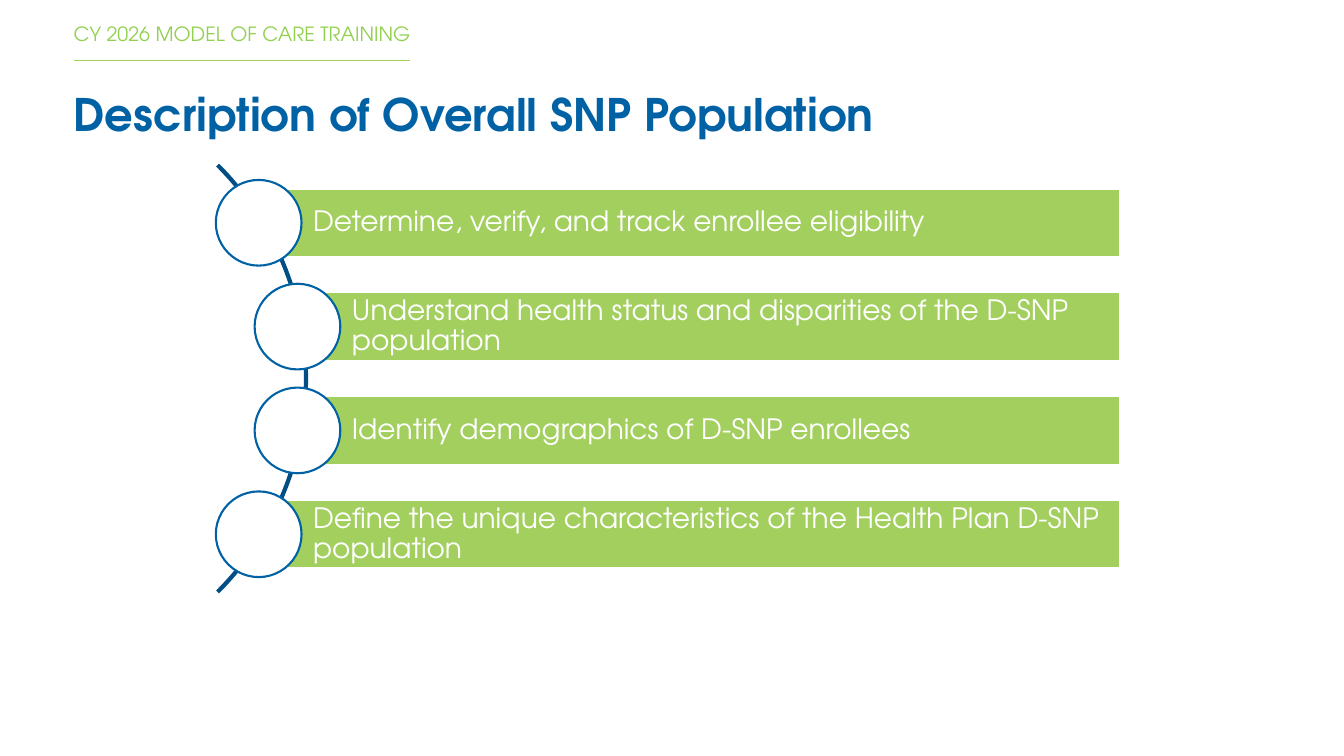
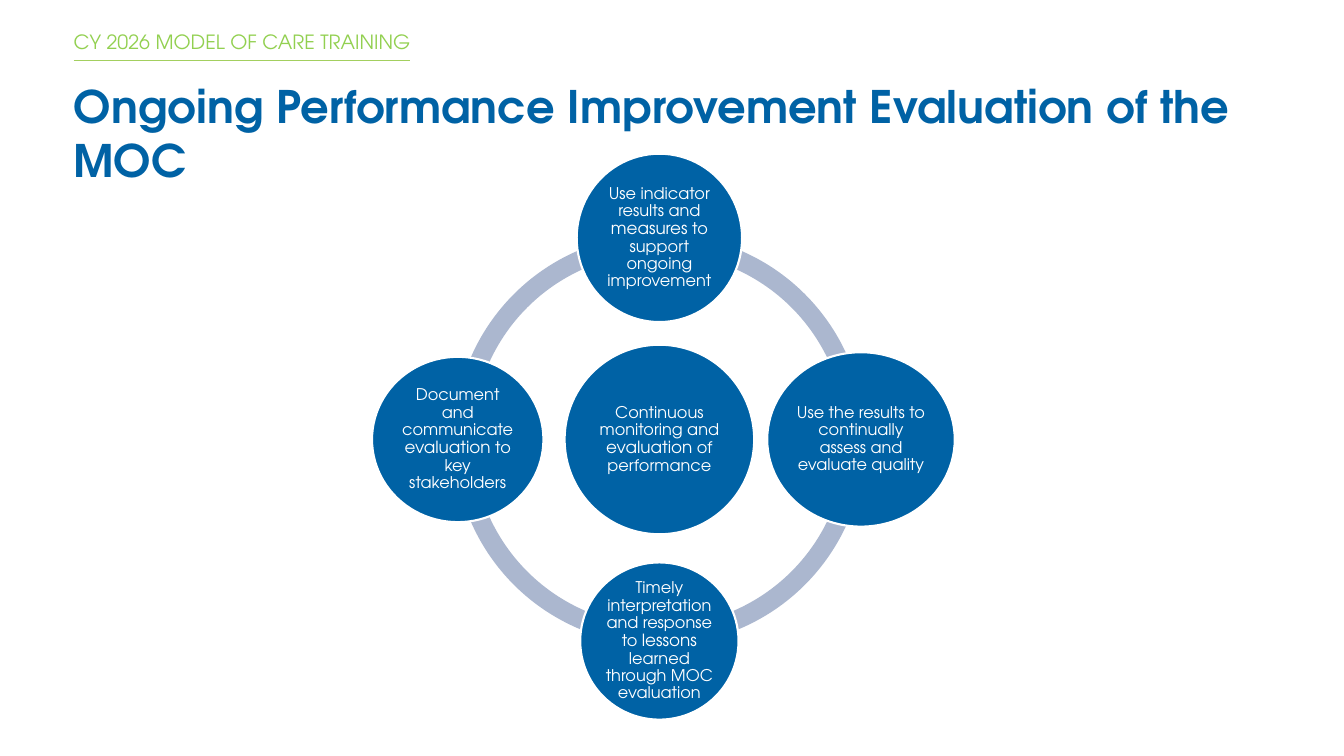
from math import sin, cos, radians, sqrt
from pptx import Presentation
from pptx.dml.color import RGBColor
from pptx.enum.shapes import MSO_CONNECTOR as Link, MSO_SHAPE as Kind
from pptx.enum.text import MSO_ANCHOR as Anchor, MSO_AUTO_SIZE as Fit, PP_ALIGN as Align
from pptx.oxml.ns import qn
from pptx.util import Pt
from lxml.etree import SubElement

PX = 9144  # 100 px to the inch
FACE = "TeX Gyre Adventor"
BLUE, NAVY, GREEN, LIME = "0062A5", "004E84", "A3CF5F", "92D050"
MIST, WHITE = "ABB7CF", "FFFFFF"
EDGES = ("margin_left", "margin_top", "margin_right", "margin_bottom")

# Shared formats
HEAD = dict(size=Pt(14), bold=False, color=LIME)
TITLE = dict(size=Pt(32), bold=True, color=BLUE)
ROW = dict(size=Pt(20), color=WHITE)
NODE = dict(size=Pt(11.5), color=WHITE)
TIGHT = dict(line_spacing=0.9, space_before=Pt(0), alignment=Align.LEFT)
ROOMY = dict(space_before=Pt(0), space_after=Pt(6), alignment=Align.LEFT)
MID = dict(line_spacing=0.9, alignment=Align.CENTER)


def px(*nums):
    return [round(n * PX) for n in nums]


def ink(code):
    return RGBColor.from_string(code)


def apply(item, vals):
    for key, val in vals.items():
        setattr(item, key, val)


def write(shape, runs, font, para, pad=(0, 0, 0, 0), anchor=Anchor.MIDDLE):
    """Fill a shape with one paragraph of (text, extra format) runs."""
    frame = shape.text_frame
    apply(frame, dict(word_wrap=True, auto_size=Fit.NONE, vertical_anchor=anchor))
    apply(frame, dict(zip(EDGES, px(*pad))))
    line = frame.paragraphs[0]
    if shape.is_placeholder:
        props = line._p.get_or_add_pPr()
        props.set("marL", "0")
        props.set("indent", "0")
        SubElement(props, qn("a:buNone"))
    apply(line, para)
    for text, extra in runs:
        run = line.add_run()
        run.text = text
        vals = {"name": FACE, **font, **extra}
        run.font.color.rgb = ink(vals.pop("color"))
        apply(run.font, vals)


def draw(slide, kind, box, fill=None, edge=None, width=1.5):
    shape = slide.shapes.add_shape(kind, *px(*box))
    shape.shadow.inherit = False
    if fill:
        shape.fill.solid()
        shape.fill.fore_color.rgb = ink(fill)
    else:
        shape.fill.background()
    if edge:
        shape.line.color.rgb = ink(edge)
        shape.line.width = Pt(width)
    else:
        shape.line.fill.background()
    return shape


def place(shape, box):
    apply(shape, dict(zip(("left", "top", "width", "height"), px(*box))))


def start(deck, title, head_y, box):
    """Add a slide with its running head, rule and title."""
    slide = deck.slides.add_slide(deck.slide_layouts[1])
    rule = slide.shapes.add_connector(Link.STRAIGHT, *px(73, 60, 407, 60))
    rule.line.color.rgb = ink(GREEN)
    rule.line.width = Pt(1)
    SubElement(rule._element.spPr, qn("a:effectLst"))

    head = slide.placeholders[1]
    place(head, (73, head_y, 416, 48))
    write(head, [("CY 2026 MODEL OF CARE TRAINING", {})], HEAD, TIGHT)

    place(slide.shapes.title, box)
    write(slide.shapes.title, [(title, {})], TITLE, ROOMY, anchor=Anchor.TOP)
    return slide


def fan(slide, box, rows, pitch=103, bar=68, dot=85):
    """Bars whose round markers follow an arc at the left of the box."""
    x, y, w, h = box
    rad, mid = h / 2, y + h / 2
    arc = draw(slide, Kind.ARC, (x + 4 - rad, y, h, h), edge=NAVY, width=3)
    arc.adjustments[0], arc.adjustments[1] = 189, 27  # 315 to 45 degrees
    for i, text in enumerate(rows):
        drop = (i - (len(rows) - 1) / 2) * pitch
        left, cy = x + sqrt(rad ** 2 - drop ** 2), mid + drop
        strip = draw(slide, Kind.RECTANGLE,
                     (left, cy - bar / 2, x + w - left, bar), GREEN, WHITE)
        write(strip, [(text, {})], ROW, TIGHT, (54, 6, 6, 6))
        draw(slide, Kind.OVAL, (left - dot / 2, cy - dot / 2, dot, dot), WHITE, BLUE)


def disc(slide, cx, cy, size, parts):
    w, h = size
    shape = draw(slide, Kind.OVAL, (cx - w / 2, cy - h / 2, w, h), BLUE, WHITE)
    # The middle part of a split text is slightly larger
    runs = [(t, {"size": Pt(12)} if i == 1 else {}) for i, t in enumerate(parts)]
    write(shape, runs, NODE, MID, (2, 2, 2, 2))


def wheel(slide, box, hub, nodes, orbit=200):
    """A ring with a hub and nodes set clockwise from the top."""
    x, y, w, h = box
    cx, cy = x + w / 2, y + h / 2
    ring = draw(slide, Kind.DONUT, box, MIST)
    ring.adjustments[0] = 0.046
    disc(slide, cx, cy, *hub)
    for i, node in enumerate(nodes):
        turn = radians(360 * i / len(nodes) - 90)
        disc(slide, cx + orbit * cos(turn), cy + orbit * sin(turn), *node)


def main():
    deck = Presentation()
    deck.slide_width, deck.slide_height = px(1333, 750)

    # People served
    slide = start(deck, "Description of Overall SNP Population", 11, (73, 86, 1033, 69))
    fan(slide, (0, 76, 1111, 599), [
        "Determine, verify, and track enrollee eligibility",
        "Understand health status and disparities of the D-SNP population",
        "Identify demographics of D-SNP enrollees",
        "Define the unique characteristics of the Health Plan D-SNP population",
    ])

    # Review cycle
    slide = start(deck, "Ongoing Performance Improvement Evaluation of the MOC",
                  19, (73, 78, 1247, 139))
    hub = ((188, 188), ("Continuous monitoring and ", "evaluation", " of performance"))
    wheel(slide, (450, 232, 408, 408), hub, [
        ((164, 167), ("Use indicator results and ", "measures",
                      " to support ongoing improvement")),
        ((186, 173), ("Use the results to continually assess and evaluate quality",)),
        ((157, 156), ("Timely interpretation and response to ", "lessons",
                      " learned through MOC evaluation")),
        ((170, 164), ("Document and communicate ", "evaluation",
                      " to key stakeholders")),
    ])
    deck.save("out.pptx")


if __name__ == "__main__":
    main()
